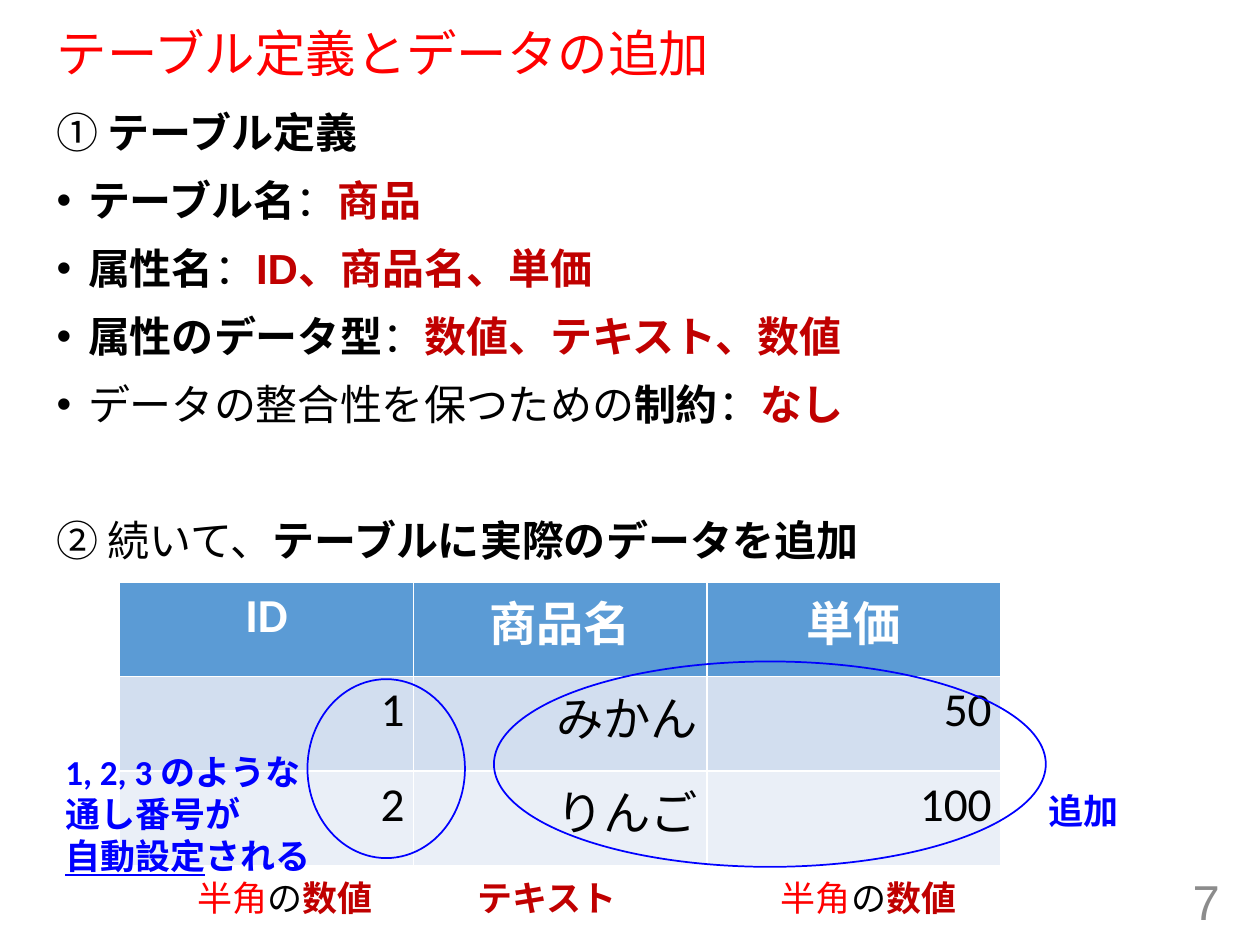
from lxml.etree import SubElement
from pptx import Presentation
from pptx.dml.color import RGBColor
from pptx.enum.shapes import MSO_SHAPE
from pptx.enum.text import MSO_ANCHOR, PP_ALIGN
from pptx.oxml.ns import qn
from pptx.util import Inches, Pt

RED, DARK_RED, BLUE, BLACK, WHITE, GRAY = "FF0000", "C00000", "0000FF", "000000", "FFFFFF", "8C8C8C"


def color(hex_string):
    return RGBColor.from_string(hex_string)


def add_run(paragraph, text, size=24, font="Arial", fill=BLACK, bold=False, underline=False):
    run = paragraph.add_run()
    run.text = text
    run.font.size = Pt(size)
    run.font.name = font
    run.font.color.rgb = color(fill)
    run.font.bold = bold
    run.font.underline = underline


presentation = Presentation()
presentation.slide_width = Inches(10)
presentation.slide_height = Inches(7.5)
slide = presentation.slides.add_slide(presentation.slide_layouts[5])

title = slide.shapes.title
title.left, title.top, title.width, title.height = Inches(0.35), Inches(0.19), Inches(9.25), Inches(0.51)
title.text_frame.vertical_anchor = MSO_ANCHOR.MIDDLE
paragraph = title.text_frame.paragraphs[0]
paragraph.alignment = PP_ALIGN.LEFT
paragraph.line_spacing = 0.9
add_run(paragraph, "テーブル定義とデータの追加", size=28.8, fill=RED)

strong = {"bold": True}
answer = {"bold": True, "fill": DARK_RED}
body_lines = [
    (False, 10, [("① ", {}), ("テーブル定義", strong)]),
    (True, 10, [("テーブル名", strong), ("：", {}), ("商品", answer)]),
    (True, 10, [("属性名", strong), ("：", {}), ("ID、商品名、単価", answer)]),
    (True, 10, [("属性のデータ型", strong), ("：", {}), ("数値、テキスト、数値", answer)]),
    (True, 10, [("データの整合性を保つための", {}), ("制約", strong), ("：", {}), ("なし", answer)]),
    (False, 49, [("② 続いて、", {}), ("テーブルに実際のデータを追加", strong)]),
]
body = slide.shapes.add_textbox(Inches(0.35), Inches(0.8), Inches(9.25), Inches(6.43)).text_frame
body.word_wrap = True
for index, (bulleted, space_before, runs) in enumerate(body_lines):
    paragraph = body.add_paragraph() if index else body.paragraphs[0]
    paragraph.space_before = Pt(space_before)
    if bulleted:
        properties = paragraph._p.get_or_add_pPr()
        properties.set("marL", str(Inches(0.25)))
        properties.set("indent", str(-Inches(0.25)))
        SubElement(properties, qn("a:buFont"), typeface="Arial")
        SubElement(properties, qn("a:buChar"), char="•")
    for text, style in runs:
        add_run(paragraph, text, **style)

number = slide.shapes.add_textbox(Inches(7.53), Inches(6.95), Inches(2.25), Inches(0.4)).text_frame
number.word_wrap = True
number.vertical_anchor = MSO_ANCHOR.MIDDLE
number.paragraphs[0].alignment = PP_ALIGN.RIGHT
add_run(number.paragraphs[0], "7", size=28, fill=GRAY)

products = [("ID", "商品名", "単価"), ("1", "みかん", "50"), ("2", "りんご", "100")]
row_fills = ["5B9BD5", "D2DEEF", "EAEFF7"]
table = slide.shapes.add_table(3, 3, Inches(0.95), Inches(4.62), Inches(6.99), Inches(2.25)).table
for row_index, (values, row_fill) in enumerate(zip(products, row_fills)):
    header = row_index == 0
    for column_index, value in enumerate(values):
        cell = table.cell(row_index, column_index)
        cell.fill.solid()
        cell.fill.fore_color.rgb = color(row_fill)
        cell.margin_left = cell.margin_right = Inches(0.07)
        cell.margin_top = cell.margin_bottom = Inches(0.04)
        paragraph = cell.text_frame.paragraphs[0]
        paragraph.alignment = PP_ALIGN.CENTER if header else PP_ALIGN.RIGHT
        add_run(paragraph, value, size=27, font="Calibri", fill=WHITE if header else BLACK, bold=header)

for left, top, width, height in [(2.44, 5.39, 1.25, 1.42), (3.92, 5.25, 4.38, 1.63)]:
    ellipse = slide.shapes.add_shape(MSO_SHAPE.OVAL, Inches(left), Inches(top), Inches(width), Inches(height))
    ellipse.shadow.inherit = False
    ellipse.fill.background()
    ellipse.line.color.rgb = color(BLUE)
    ellipse.line.width = Pt(1)

note = {"bold": True, "fill": BLUE}
numeric_type = [[("半角", {"fill": RED}), ("の", {}), ("数値", answer)]]
labels = [
    (1.47, 6.91, 1.6, 0.44, numeric_type),
    (3.69, 6.91, 1.32, 0.44, [[("テキスト", answer)]]),
    (6.1, 6.91, 1.6, 0.44, numeric_type),
    (0.42, 5.91, 2.17, 1.11, [
        [("1, 2, 3 のような", note)],
        [("通し番号が", note)],
        [("自動設定", {**note, "underline": True}), ("される", note)],
    ]),
    (8.22, 6.22, 0.76, 0.44, [[("追加", note)]]),
]
for left, top, width, height, lines in labels:
    label = slide.shapes.add_textbox(Inches(left), Inches(top), Inches(width), Inches(height)).text_frame
    label.word_wrap = False
    for index, runs in enumerate(lines):
        paragraph = label.add_paragraph() if index else label.paragraphs[0]
        for text, style in runs:
            add_run(paragraph, text, size=20, font="Calibri", **style)

presentation.save("out.pptx")
